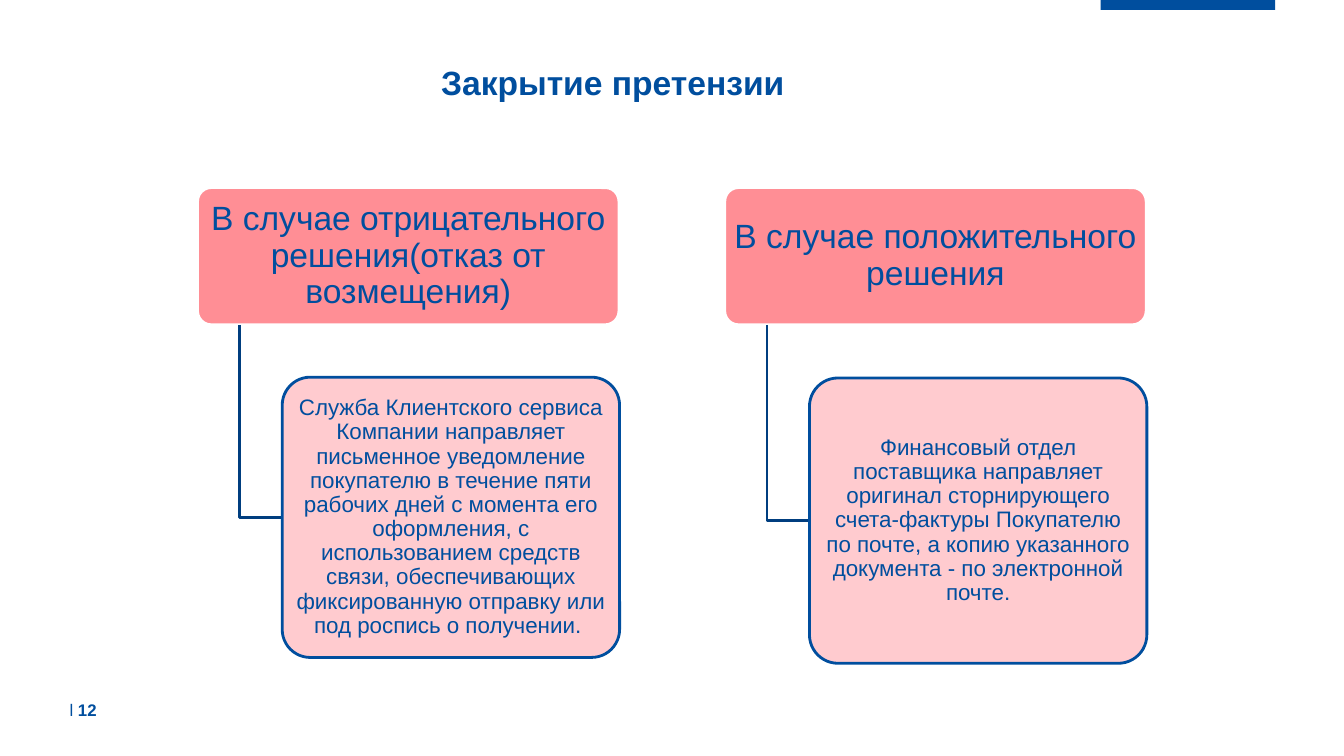
"""Builds the slide on how a claim is closed."""
from lxml import etree
from pptx import Presentation
from pptx import util as u
from pptx.dml.color import RGBColor
from pptx.enum import shapes, text
from pptx.oxml.ns import qn

BLUE, DARK_BLUE, WHITE = "004E9E", "003E7F", "FFFFFF"
CORAL, PINK = "FF8E95", "FFC6CA"
CASE_WIDTH, CASE_HEIGHT, CASE_TOP = 301, 98, 134
ACTION_WIDTH, ACTION_INDENT, BRANCH_INDENT = 241, 60.5, 30.2

CASES = [
    (141.1, "В случае отрицательного решения(отказ от возмещения)", 269.4, 200.2,
     "Служба Клиентского сервиса Компании направляет письменное уведомление "
     "покупателю в течение пяти рабочих дней с момента его оформления, с "
     "использованием средств связи, обеспечивающих фиксированную отправку или "
     "под роспись о получении. "),
    (517.7, "В случае положительного решения", 270, 203.8,
     "Финансовый отдел поставщика направляет оригинал сторнирующего "
     "счета-фактуры Покупателю по почте, а копию указанного документа - "
     "по электронной почте."),
]


def colour(value):
    return RGBColor.from_string(value)


def apply(target, values):
    for name, value in values.items():
        setattr(target, name, value)


class ClaimSlide:
    def __init__(self, slide):
        self.slide = slide
        self.font = {"name": "Arial", "color": BLUE}

    def add_words(self, paragraph, wording, size, bold=False):
        run = paragraph.add_run()
        run.text = wording
        apply(run.font, {"name": self.font["name"], "size": u.Pt(size), "bold": bold})
        run.font.color.rgb = colour(self.font["color"])

    def frame(self, owner, side=0, vertical=0, anchor=text.MSO_ANCHOR.TOP):
        apply(owner.text_frame, {
            "word_wrap": True, "auto_size": text.MSO_AUTO_SIZE.NONE,
            "vertical_anchor": anchor,
            "margin_left": u.Pt(side), "margin_right": u.Pt(side),
            "margin_top": u.Pt(vertical), "margin_bottom": u.Pt(vertical)})
        return owner.text_frame.paragraphs[0]

    def title(self, wording, left, top, width, height):
        heading = self.slide.shapes.title
        apply(heading, {"left": u.Pt(left), "top": u.Pt(top),
                        "width": u.Pt(width), "height": u.Pt(height)})
        paragraph = self.frame(heading)
        paragraph.alignment = text.PP_ALIGN.CENTER
        self.add_words(paragraph, wording, 24, True)

    def panel(self, kind, left, top, width, height, fill, outline=None):
        panel = self.slide.shapes.add_shape(
            kind, u.Pt(left), u.Pt(top), u.Pt(width), u.Pt(height))
        panel.shadow.inherit = False
        panel.fill.solid()
        panel.fill.fore_color.rgb = colour(fill)
        if outline:
            self.stroke(panel, outline)
        else:
            panel.line.fill.background()
        return panel

    def stroke(self, owner, outline):
        owner.line.color.rgb = colour(outline)
        owner.line.width = u.Pt(2)

    def card(self, wording, box, fill, outline, size, side, vertical, opacity=100):
        card = self.panel(shapes.MSO_SHAPE.ROUNDED_RECTANGLE, *box, fill, outline)
        card.adjustments[0] = 0.1
        if opacity < 100:
            tint = card.element.spPr.find(qn("a:solidFill"))[0]
            etree.SubElement(tint, qn("a:alpha"), val=str(opacity * 1000))
        paragraph = self.frame(card, side, vertical, text.MSO_ANCHOR.MIDDLE)
        apply(paragraph, {"alignment": text.PP_ALIGN.CENTER, "line_spacing": 0.9})
        self.add_words(paragraph, wording, size)

    def branch(self, left, top, right, bottom):
        corners = [(u.Pt(x), u.Pt(bottom)) for x in (left, right)]
        outline = self.slide.shapes.build_freeform(u.Pt(left), u.Pt(top))
        outline.add_line_segments(corners, close=False)
        branch = outline.convert_to_shape()
        branch.shadow.inherit = False
        branch.fill.background()
        self.stroke(branch, DARK_BLUE)

    def page_number(self, number, left, top, width, height):
        footer = self.slide.shapes.add_textbox(
            u.Pt(left), u.Pt(top), u.Pt(width), u.Pt(height))
        paragraph = self.frame(footer)
        self.add_words(paragraph, "l ", 12)
        self.add_words(paragraph, number, 12, True)


def main():
    deck = Presentation()
    apply(deck, {"slide_width": u.Pt(960), "slide_height": u.Pt(540)})
    page = ClaimSlide(deck.slides.add_slide(deck.slide_layouts[5]))
    page.panel(shapes.MSO_SHAPE.RECTANGLE, 786.2, 0, 124.6, 7, BLUE)
    page.title("Закрытие претензии", 49.7, 44, 776, 78.5)
    for left, case, action_top, action_height, action in CASES:
        action_left = left + ACTION_INDENT
        page.card(case, (left, CASE_TOP, CASE_WIDTH, CASE_HEIGHT),
                  CORAL, WHITE, 24, 3.6, 2.4)
        page.branch(left + BRANCH_INDENT, CASE_TOP + CASE_HEIGHT,
                    action_left, action_top + action_height / 2)
        page.card(action, (action_left, action_top, ACTION_WIDTH, action_height),
                  PINK, BLUE, 16, 2.4, 1.6, opacity=90)
    page.page_number("12", 49.7, 499.7, 61, 14.4)
    deck.save("out.pptx")


if __name__ == "__main__":
    main()
